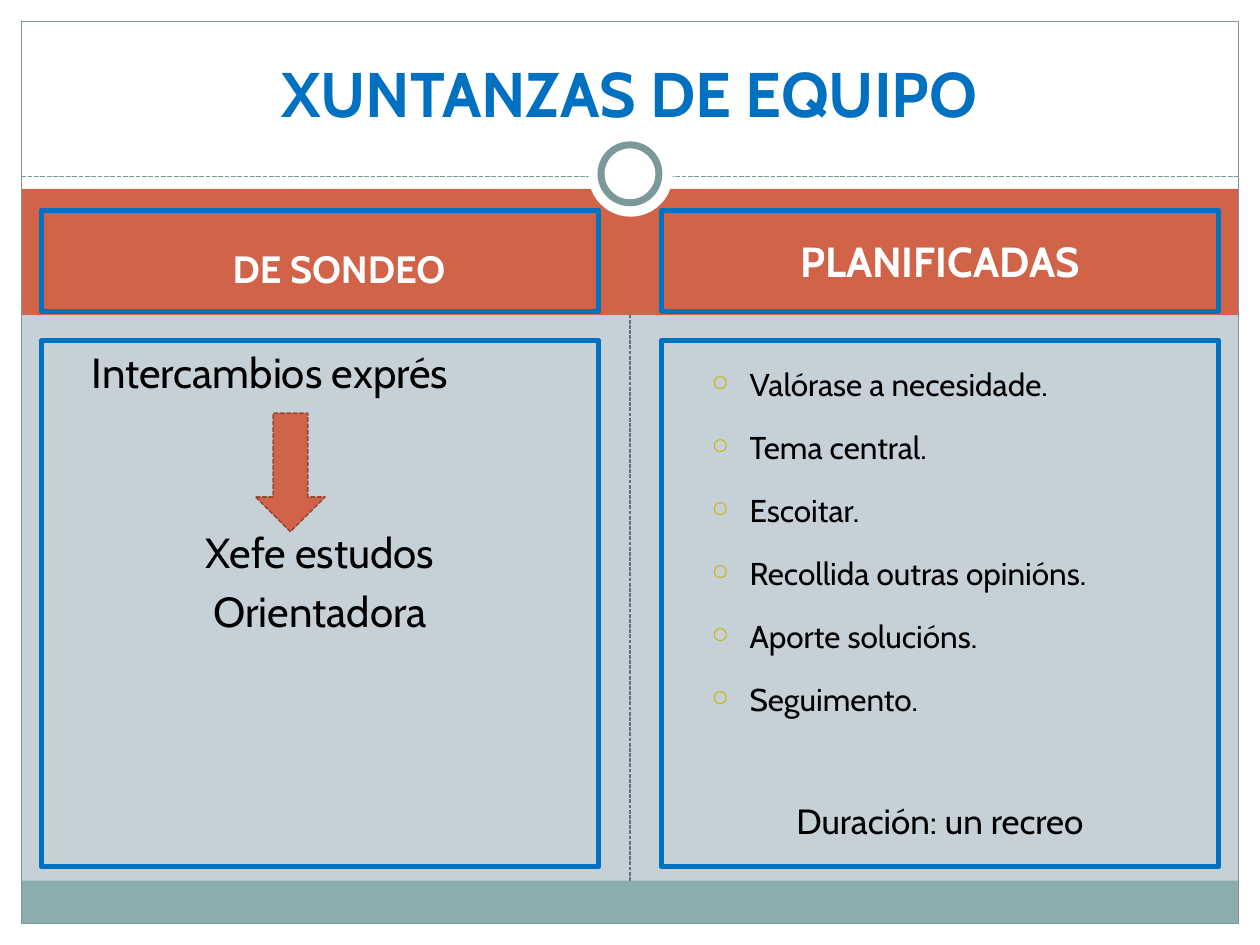
from lxml.etree import SubElement
from pptx import Presentation
from pptx.dml.color import RGBColor
from pptx.enum.dml import MSO_LINE
from pptx.enum.shapes import MSO_CONNECTOR, MSO_SHAPE
from pptx.enum.text import MSO_ANCHOR, PP_ALIGN
from pptx.oxml.ns import qn
from pptx.util import Inches, Pt

COLORS = {
    "background": "C5D1D7", "white": "FFFFFF", "black": "000000",
    "rust": "D16349", "rust_edge": "9B4936", "teal": "8CADAE",
    "frame": "7C999A", "divider": "646B86", "blue": "0070C0",
    "bullet": "CCB400",
}
FONT = "Cabin"
COLUMNS = (0.33, 5.25)
COLUMN_WIDTH = 4.42
STEPS = ("Valórase a necesidade.", "Tema central.", "Escoitar.",
         "Recollida outras opinións.", "Aporte solucións.", "Seguimento.")


def rgb(name):
    return RGBColor.from_string(COLORS[name])


def set_line(line, color, width, dashed=False):
    line.color.rgb = rgb(color)
    line.width = Pt(width)
    if dashed:
        line.dash_style = MSO_LINE.SQUARE_DOT


def add_shape(slide, kind, box, fill=None, line=None, width=0.75, dashed=False):
    shape = slide.shapes.add_shape(kind, *map(Inches, box))
    shape.shadow.inherit = False
    if fill:
        shape.fill.solid()
        shape.fill.fore_color.rgb = rgb(fill)
    else:
        shape.fill.background()
    if line:
        set_line(shape.line, line, width, dashed)
    else:
        shape.line.fill.background()
    return shape


def add_dashed_line(slide, ends, color, width):
    rule = slide.shapes.add_connector(MSO_CONNECTOR.STRAIGHT, *map(Inches, ends))
    set_line(rule.line, color, width, dashed=True)
    SubElement(rule.element.spPr, qn("a:effectLst"))


def add_panel(slide, left, top, height, anchor):
    panel = add_shape(slide, MSO_SHAPE.RECTANGLE,
                      (left, top, COLUMN_WIDTH, height), line="blue", width=3)
    frame = panel.text_frame
    frame.word_wrap = True
    frame.vertical_anchor = anchor
    return frame


def write(frame, text, size, color="black", bold=False, align=PP_ALIGN.CENTER,
          before=0, spacing=None, margin=0, bullet=False):
    paragraph = frame.paragraphs[0]
    if paragraph.runs:
        paragraph = frame.add_paragraph()
    paragraph.alignment = align
    paragraph.space_before = Pt(before)
    if spacing:
        paragraph.line_spacing = spacing
    properties = paragraph._p.get_or_add_pPr()
    properties.set("marL", str(Inches(margin)))
    properties.set("indent", str(Inches(-0.3 if bullet else 0)))
    if bullet:
        bullet_color = SubElement(properties, qn("a:buClr"))
        SubElement(bullet_color, qn("a:srgbClr"), val=COLORS["bullet"])
        SubElement(properties, qn("a:buSzPct"), val="70000")
        SubElement(properties, qn("a:buChar"), char="○")
    run = paragraph.add_run()
    run.text = text
    run.font.name = FONT
    run.font.size = Pt(size)
    run.font.bold = bold
    run.font.color.rgb = rgb(color)


def add_decor(slide):
    add_dashed_line(slide, (5, 6.99, 5, 2.41), "divider", 0.75)
    # White margins, then the coloured bands
    bands = (
        ((0, 0, 10, 1.58), "white"), ((0, 7.33, 10, 0.17), "white"),
        ((0, 0, 0.17, 7.5), "white"), ((9.83, 0, 0.17, 7.5), "white"),
        ((0.17, 1.5, 9.66, 1), "rust"), ((0.17, 6.99, 9.66, 0.34), "teal"),
    )
    for box, color in bands:
        add_shape(slide, MSO_SHAPE.RECTANGLE, box, color)
    add_dashed_line(slide, (0.17, 1.4, 9.83, 1.4), "frame", 0.9)
    add_shape(slide, MSO_SHAPE.RECTANGLE, (0.17, 0.17, 9.66, 7.16), line="frame")
    # Ring on the header rule
    add_shape(slide, MSO_SHAPE.OVAL, (4.67, 1.05, 0.67, 0.67), "white")
    add_shape(slide, MSO_SHAPE.OVAL, (4.77, 1.15, 0.46, 0.46), "white", "frame", 4)


def add_title(slide, text):
    title = slide.shapes.title
    title.left, title.top = Inches(0.33), Inches(0.25)
    title.width, title.height = Inches(9.33), Inches(0.83)
    title.text_frame.vertical_anchor = MSO_ANCHOR.BOTTOM
    write(title.text_frame, text, 36, "blue", bold=True)
    # Bring the title in front of the white header
    title.element.getparent().append(title.element)


def add_survey_column(slide, left):
    heading = add_panel(slide, left, 1.67, 0.8, MSO_ANCHOR.MIDDLE)
    heading.margin_top = Inches(0.17)
    write(heading, "DE SONDEO", 21.7, "white", bold=True, margin=0.3)
    body = add_panel(slide, left, 2.7, 4.18, MSO_ANCHOR.TOP)
    write(body, "Intercambios exprés", 24, align=PP_ALIGN.LEFT, margin=0.3)
    write(body, "Xefe estudos", 24, before=74)
    write(body, "Orientadora", 24, before=4.8)
    add_shape(slide, MSO_SHAPE.DOWN_ARROW, (2.03, 3.28, 0.55, 0.94),
              "rust", "rust_edge", 0.9, dashed=True)


def add_planned_column(slide, left):
    heading = add_panel(slide, left, 1.67, 0.8, MSO_ANCHOR.MIDDLE)
    write(heading, "PLANIFICADAS", 24, "white", bold=True)
    body = add_panel(slide, left, 2.7, 4.18, MSO_ANCHOR.TOP)
    for index, step in enumerate(STEPS):
        write(body, step, 18, align=PP_ALIGN.LEFT, before=3.6 if index else 0,
              spacing=1.5, margin=0.6, bullet=True)
    write(body, "Duración: un recreo", 20, before=46.5)


def main():
    deck = Presentation()
    deck.slide_width, deck.slide_height = Inches(10), Inches(7.5)
    slide = deck.slides.add_slide(deck.slide_layouts[5])
    slide.background.fill.solid()
    slide.background.fill.fore_color.rgb = rgb("background")
    add_decor(slide)
    add_survey_column(slide, COLUMNS[0])
    add_planned_column(slide, COLUMNS[1])
    add_title(slide, "XUNTANZAS DE EQUIPO")
    deck.save("out.pptx")


if __name__ == "__main__":
    main()
